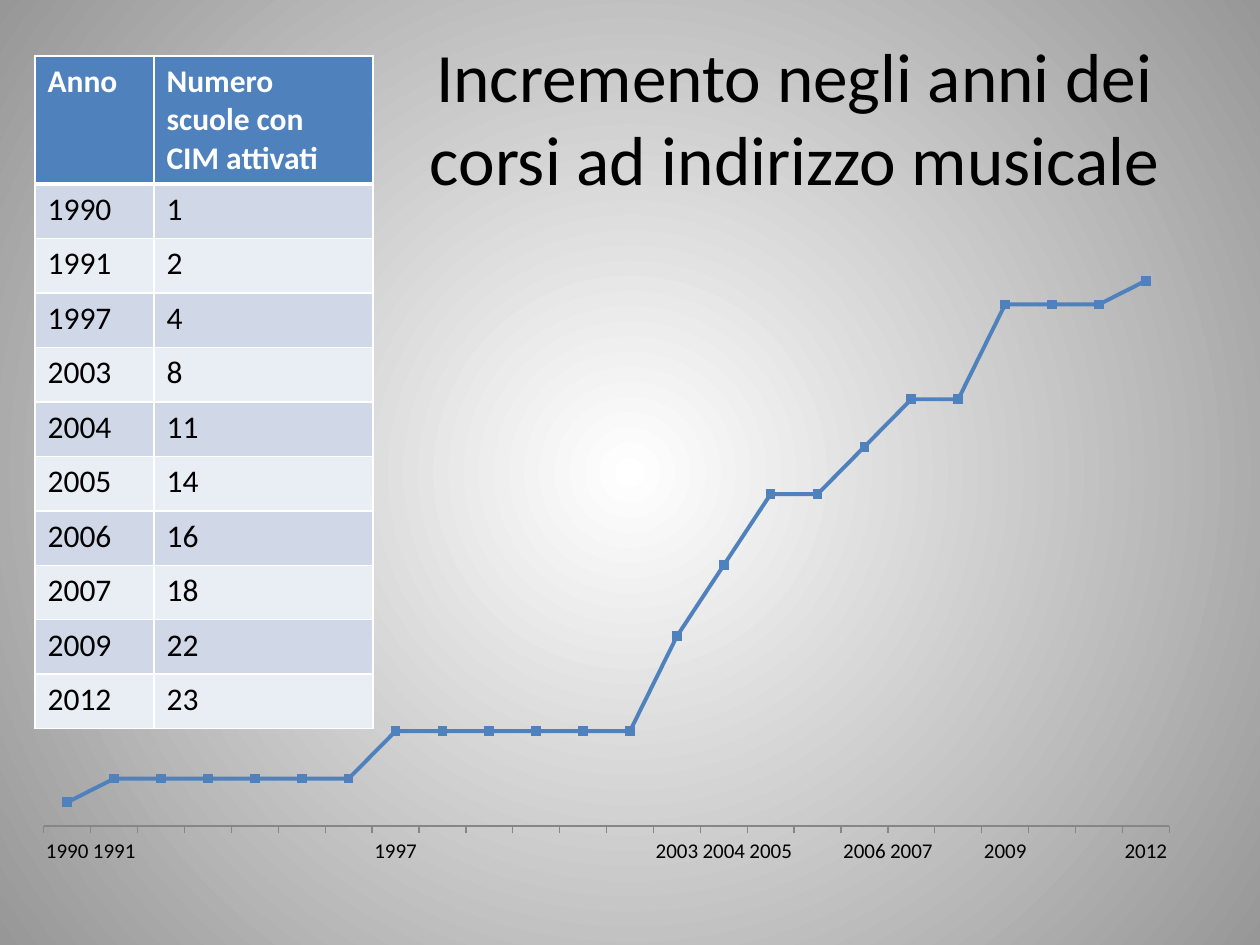
from dataclasses import dataclass

from lxml.etree import SubElement
from pptx import Presentation
from pptx.chart.data import CategoryChartData
from pptx.dml.color import RGBColor
from pptx.enum.chart import XL_CHART_TYPE as ChartType
from pptx.enum.chart import XL_MARKER_STYLE as Marker
from pptx.enum.chart import XL_TICK_MARK as Tick
from pptx.enum.text import MSO_ANCHOR as Anchor
from pptx.enum.text import MSO_AUTO_SIZE as AutoSize
from pptx.enum.text import PP_ALIGN as Align
from pptx.oxml.ns import qn
from pptx.util import Emu, Pt

BLUE, WHITE, BLACK, GREY = "4F81BD", "FFFFFF", "000000", "868686"
BANDS = ("D0D8E8", "E9EDF4")
HEADINGS = ("Anno", "Numero scuole con CIM attivati")
HEADER_HEIGHT, ROW_HEIGHT = 96, 54.5
COLUMN_WIDTHS = (119, 219)


@dataclass(frozen=True)
class Box:
    left: int
    top: int
    width: int
    height: int

    def emu(self) -> tuple:
        return tuple(map(px, (self.left, self.top, self.width, self.height)))


@dataclass(frozen=True)
class YearCount:
    """Schools active from a year on; the level holds over unlabelled points."""
    year: str
    schools: int
    unlabelled: int = 0


COUNTS = (
    YearCount("1990", 1),
    YearCount("1991", 2, 5),
    YearCount("1997", 4, 5),
    YearCount("2003", 8),
    YearCount("2004", 11),
    YearCount("2005", 14, 1),
    YearCount("2006", 16),
    YearCount("2007", 18, 1),
    YearCount("2009", 22, 2),
    YearCount("2012", 23),
)
TITLE_BOX = Box(392, 38, 805, 157)
CHART_BOX = Box(0, 224, 1186, 669)
TABLE_BOX = Box(35, 56, 338, 673)


def px(length: float) -> Emu:
    return Emu(round(length * 914400 / 126))


def rgb(value: str) -> RGBColor:
    return RGBColor.from_string(value)


def set_all(target, values: dict) -> None:
    for name, value in values.items():
        setattr(target, name, value)


def style_font(font, size: float, color: str, bold: bool = False) -> None:
    set_all(font, {"name": "Calibri", "size": Pt(size), "bold": bold})
    font.color.rgb = rgb(color)


def paint_background(slide) -> None:
    fill = slide.background.fill
    fill.gradient()
    for stop, color in zip(fill.gradient_stops, (WHITE, "979797")):
        stop.color.rgb = rgb(color)
    gradient = slide.element.find(".//" + qn("a:gradFill"))
    gradient.remove(gradient.find(qn("a:lin")))
    radial = SubElement(gradient, qn("a:path"), path="circle")
    SubElement(radial, qn("a:fillToRect"), dict.fromkeys("ltrb", "50000"))


def write_title(slide) -> None:
    title = slide.shapes.title
    set_all(title, dict(zip(("left", "top", "width", "height"), TITLE_BOX.emu())))
    frame = title.text_frame
    frame.text = "Incremento negli anni dei corsi ad indirizzo musicale"
    set_all(frame, {"word_wrap": True, "auto_size": AutoSize.NONE,
                    "vertical_anchor": Anchor.MIDDLE})
    paragraph = frame.paragraphs[0]
    paragraph.alignment = Align.CENTER
    style_font(paragraph.runs[0].font, 39.6, BLACK)


def fix_plot_area(chart) -> None:
    """Place the inner plot area by fractions of the chart."""
    area = chart.plots[0]._element.getparent()
    layout = area.find(qn("c:layout"))
    if layout is None:
        layout = SubElement(area, qn("c:layout"))
        area.insert(0, layout)
    manual = SubElement(layout, qn("c:manualLayout"))
    settings = {"layoutTarget": "inner", "xMode": "edge", "yMode": "edge",
                "x": "0.037", "y": "0.014", "w": "0.949", "h": "0.886"}
    for name, value in settings.items():
        SubElement(manual, qn(f"c:{name}"), val=value)


def label_every_year(axis) -> None:
    """Keep the labels level and skip none of them."""
    element = axis._element
    element.find(qn("c:txPr")).find(qn("a:bodyPr")).set("rot", "0")
    skip = SubElement(element, qn("c:tickLblSkip"), val="1")
    element.find(qn("c:noMultiLvlLbl")).addprevious(skip)


def draw_growth_chart(slide) -> None:
    data = CategoryChartData()
    levels = []
    for count in COUNTS:
        for label in (count.year, *[""] * count.unlabelled):
            data.add_category(label)
            levels.append(count.schools)
    data.add_series("Series 1", levels)
    chart = slide.shapes.add_chart(
        ChartType.LINE_MARKERS, *CHART_BOX.emu(), data).chart
    set_all(chart, {"has_title": False, "has_legend": False})
    style_font(chart.font, 18, BLACK)
    chart.plots[0].vary_by_categories = False

    set_all(chart.value_axis, {"visible": False, "has_major_gridlines": False,
                               "minimum_scale": 0, "maximum_scale": 25})
    years = chart.category_axis
    set_all(years, {"major_tick_mark": Tick.OUTSIDE, "minor_tick_mark": Tick.NONE,
                    "has_major_gridlines": False})
    years.format.line.color.rgb = rgb(GREY)
    years.format.line.width = Pt(0.75)
    style_font(years.tick_labels.font, 12, BLACK)
    label_every_year(years)

    schools = chart.plots[0].series[0]
    schools.smooth = False
    schools.format.line.color.rgb = rgb(BLUE)
    schools.format.line.width = Pt(2.25)
    set_all(schools.marker, {"style": Marker.SQUARE, "size": 5})
    schools.marker.format.fill.solid()
    schools.marker.format.fill.fore_color.rgb = rgb(BLUE)
    schools.marker.format.line.color.rgb = rgb(BLUE)
    fix_plot_area(chart)


def border_cell(cell, widths: dict) -> None:
    properties = cell._tc.get_or_add_tcPr()
    for position, (side, points) in enumerate(widths.items()):
        line = SubElement(properties, qn(f"a:ln{side}"), w=str(Pt(points)))
        solid = SubElement(line, qn("a:solidFill"))
        SubElement(solid, qn("a:srgbClr"), val=WHITE)
        properties.insert(position, line)


def draw_table(slide) -> None:
    rows = [HEADINGS] + [(count.year, str(count.schools)) for count in COUNTS]
    frame = slide.shapes.add_table(len(rows), len(HEADINGS), *TABLE_BOX.emu())
    table = frame.table
    for column, width in zip(table.columns, COLUMN_WIDTHS):
        column.width = px(width)
    for r, texts in enumerate(rows):
        header = r == 0
        table.rows[r].height = px(HEADER_HEIGHT if header else ROW_HEIGHT)
        for c, text in enumerate(texts):
            cell = table.cell(r, c)
            cell.text = text
            style_font(cell.text_frame.paragraphs[0].runs[0].font, 18,
                       WHITE if header else BLACK, header)
            cell.fill.solid()
            cell.fill.fore_color.rgb = rgb(BLUE if header else BANDS[(r - 1) % 2])
            border_cell(cell, {"L": 1, "R": 1, "T": 3 if r == 1 else 1,
                               "B": 3 if header else 1})
    frame.height = px(TABLE_BOX.height)


def main() -> None:
    deck = Presentation()
    set_all(deck, {"slide_width": px(1260), "slide_height": px(945)})
    slide = deck.slides.add_slide(deck.slide_layouts.get_by_name("Title Only"))
    paint_background(slide)
    write_title(slide)
    draw_growth_chart(slide)
    draw_table(slide)
    deck.save("out.pptx")


if __name__ == "__main__":
    main()
